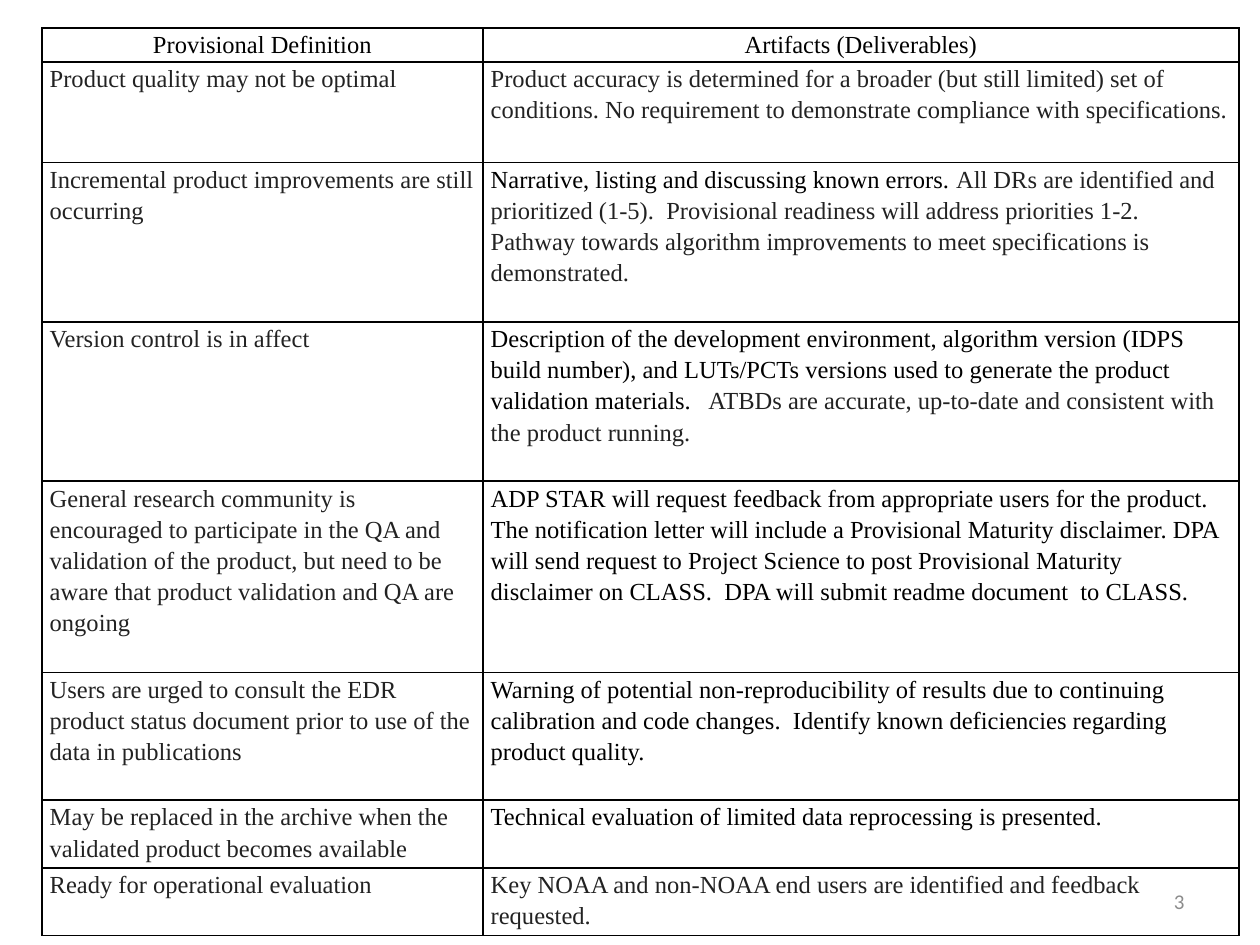
import dataclasses

import lxml.etree
import pptx
import pptx.dml.color
import pptx.enum.text
import pptx.oxml.ns
import pptx.slide
import pptx.util

Pt = pptx.util.Pt
RGBColor = pptx.dml.color.RGBColor
Align = pptx.enum.text.PP_ALIGN
Anchor = pptx.enum.text.MSO_ANCHOR

BLACK = RGBColor(0x00, 0x00, 0x00)
CHARCOAL = RGBColor(0x22, 0x22, 0x22)
GRAY = RGBColor(0x8C, 0x8C, 0x8C)

COLUMN_WIDTHS = [252, 432]
HEADINGS = ["Provisional Definition", "Artifacts (Deliverables)"]
HEADING_HEIGHT = 19.4

CRITERIA = [
    (57.6, "Product quality may not be optimal", [
        ("Product accuracy is determined for a broader (but still limited) set of conditions. "
         "No requirement to demonstrate compliance with specifications.", CHARCOAL)]),
    (91, "Incremental product improvements are still occurring", [
        ("Narrative, listing and discussing known errors. ", BLACK),
        ("All DRs are identified and prioritized (1-5).  Provisional readiness will address "
         "priorities 1-2.  Pathway towards algorithm improvements to meet specifications is "
         "demonstrated.", CHARCOAL)]),
    (91, "Version control is in affect", [
        ("Description of the development environment, algorithm version (IDPS build number), "
         "and LUTs/PCTs versions used to generate the product validation materials.  ", BLACK),
        (" ATBDs are accurate, up-to-date and consistent with the product running.", CHARCOAL)]),
    (109.3, "General research community is encouraged to participate in the QA and validation "
     "of the product, but need to be aware that product validation and QA are ongoing", [
        ("ADP STAR will request feedback from appropriate users for the product.  "
         "The notification letter will include a Provisional Maturity disclaimer. "
         "DPA will send request to Project Science to post Provisional Maturity disclaimer "
         "on CLASS.  DPA will submit readme document  to CLASS.", BLACK)]),
    (73, "Users are urged to consult the EDR product status document prior to use of the "
     "data in publications", [
        ("Warning of potential non-reproducibility of results due to continuing calibration "
         "and code changes.  Identify known deficiencies regarding product quality.", BLACK)]),
    (38.7, "May be replaced in the archive when the validated product becomes available", [
        ("Technical evaluation of limited data reprocessing is presented.", BLACK)]),
    (38.7, "Ready for operational evaluation", [
        ("Key NOAA and non-NOAA end users are identified and feedback requested.", CHARCOAL)]),
]


@dataclasses.dataclass
class SlideWriter:
    page: pptx.slide.Slide
    table_font: str = "Times New Roman"
    table_size: float = 14
    line_spacing: float = 1.15
    cell_inset: float = 4.4
    border_width: float = 1
    number_font: str = "Calibri"
    number_size: float = 12

    def span(self, para, text, font, size, color):
        span = para.add_run()
        span.text = text
        span.font.name = font
        span.font.size = Pt(size)
        span.font.color.rgb = color

    def borders(self, cell):
        properties = cell._tc.get_or_add_tcPr()
        qn = pptx.oxml.ns.qn
        for side in ("lnL", "lnR", "lnT", "lnB"):
            line = lxml.etree.SubElement(
                properties, qn(f"a:{side}"), w=str(Pt(self.border_width)))
            fill = lxml.etree.SubElement(line, qn("a:solidFill"))
            lxml.etree.SubElement(fill, qn("a:srgbClr"), val=str(BLACK))

    def cell(self, cell, spans, alignment):
        cell.margin_left = cell.margin_right = Pt(self.cell_inset)
        cell.margin_top = cell.margin_bottom = 0
        self.borders(cell)
        cell.fill.background()
        para = cell.text_frame.paragraphs[0]
        para.alignment = alignment
        para.line_spacing = self.line_spacing
        for text, color in spans:
            self.span(para, text, self.table_font, self.table_size, color)

    def table(self, left, top, widths, rows):
        heights = [height for height, _, _ in rows]
        table = self.page.shapes.add_table(
            len(rows), len(widths), Pt(left), Pt(top),
            Pt(sum(widths)), Pt(sum(heights))).table
        table.first_row = table.horz_banding = False
        for column, width in zip(table.columns, widths):
            column.width = Pt(width)
        for row, (height, alignment, entries) in zip(table.rows, rows):
            row.height = Pt(height)
            for cell, spans in zip(row.cells, entries):
                self.cell(cell, spans, alignment)

    def page_number(self, left, top, width, height, text):
        box = self.page.shapes.add_textbox(Pt(left), Pt(top), Pt(width), Pt(height))
        frame = box.text_frame
        frame.word_wrap = True
        frame.vertical_anchor = Anchor.MIDDLE
        para = frame.paragraphs[0]
        para.alignment = Align.RIGHT
        self.span(para, text, self.number_font, self.number_size, GRAY)


def main():
    deck = pptx.Presentation()
    deck.slide_width, deck.slide_height = Pt(720), Pt(540)
    writer = SlideWriter(deck.slides.add_slide(deck.slide_layouts[6]))
    heading_cells = [[(heading, BLACK)] for heading in HEADINGS]
    rows = [(HEADING_HEIGHT, Align.CENTER, heading_cells)]
    for height, definition, artifacts in CRITERIA:
        rows.append((height, Align.LEFT, [[(definition, CHARCOAL)], artifacts]))
    writer.table(24, 16, COLUMN_WIDTHS, rows)
    writer.page_number(516, 500.5, 168, 28.75, "3")
    deck.save("out.pptx")


if __name__ == "__main__":
    main()
